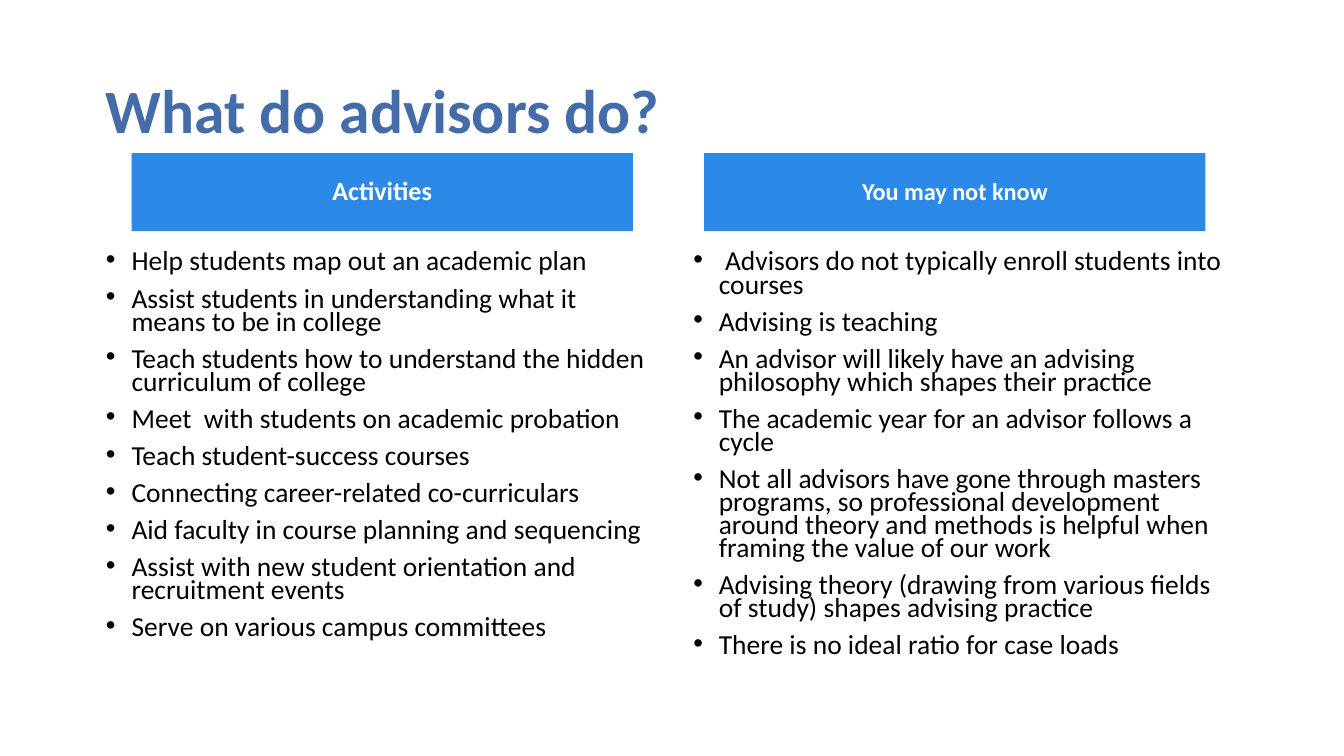
from dataclasses import dataclass

from lxml.etree import SubElement
from pptx import Presentation
from pptx.dml.color import RGBColor
from pptx.enum.shapes import MSO_SHAPE
from pptx.enum.text import MSO_ANCHOR, PP_ALIGN
from pptx.oxml.ns import qn
from pptx.util import Inches, Pt

FONT = "Calibri"
WIDTH = Inches(10)
HEIGHT = WIDTH * 9 // 16


@dataclass
class Column:
    """One headed list of the slide."""
    head: str
    size: float
    bar: float
    left: float
    items: list[str]


COLUMNS = [
    Column("Activities", 14, 0.98, 0.69, [
        "Help students map out an academic plan",
        "Assist students in understanding what it means to be in college",
        "Teach students how to understand the hidden curriculum of college",
        "Meet  with students on academic probation",
        "Teach student-success courses",
        "Connecting career-related co-curriculars",
        "Aid faculty in course planning and sequencing",
        "Assist with new student orientation and recruitment events",
        "Serve on various campus committees",
    ]),
    Column("You may not know", 13, 5.24, 5.06, [
        " Advisors do not typically enroll students into courses",
        "Advising is teaching",
        "An advisor will likely have an advising philosophy which shapes their practice",
        "The academic year for an advisor follows a cycle",
        "Not all advisors have gone through masters programs, so professional "
        "development around theory and methods is helpful when framing the value of our work",
        "Advising theory (drawing from various fields of study) shapes advising practice",
        "There is no ideal ratio for case loads",
    ]),
]


def paint(color: str) -> RGBColor:
    """Turn a hex string into a colour."""
    return RGBColor.from_string(color)


def write(shape, lines: list[str], *, size: float, color: str = "000000",
          bold: bool = False, align=PP_ALIGN.LEFT, anchor=MSO_ANCHOR.TOP,
          space: float = 0.9, before: float = 0, bullet: bool = False) -> None:
    """Fill a shape with one formatted paragraph per line."""
    frame = shape.text_frame
    frame.word_wrap = True
    frame.vertical_anchor = anchor
    for i, line in enumerate(lines):
        para = frame.paragraphs[0] if i == 0 else frame.add_paragraph()
        para.alignment = align
        para.line_spacing = space
        para.space_before = Pt(before)
        run = para.add_run()
        run.text = line
        font = run.font
        font.name, font.size, font.bold = FONT, Pt(size), bold
        font.color.rgb = paint(color)
        if bullet:
            props = para._p.get_or_add_pPr()
            props.set("marL", str(Inches(0.19)))
            props.set("indent", str(Inches(-0.19)))
            SubElement(props, qn("a:buFont"), typeface="Arial")
            SubElement(props, qn("a:buChar"), char="•")


def draw(slide, col: Column) -> None:
    """Draw the list and the header bar of a column."""
    body = slide.shapes.add_textbox(
        Inches(col.left), Inches(1.83), Inches(4.25), Inches(3.57))
    write(body, col.items, size=14.7, space=0.7, before=7.5, bullet=True)
    bar = slide.shapes.add_shape(
        MSO_SHAPE.RECTANGLE, Inches(col.bar), Inches(1.14), Inches(3.73), Inches(0.58))
    bar.shadow.inherit = False
    bar.fill.solid()
    bar.fill.fore_color.rgb = paint("2C89E8")
    bar.line.fill.background()
    write(bar, [col.head], size=col.size, color="FFFFFF", bold=True,
          align=PP_ALIGN.CENTER, anchor=MSO_ANCHOR.MIDDLE)


def main() -> None:
    """Build and save the slide."""
    deck = Presentation()
    deck.slide_width, deck.slide_height = WIDTH, HEIGHT
    slide = deck.slides.add_slide(deck.slide_layouts[6])
    title = slide.shapes.add_textbox(
        Inches(0.69), Inches(0.3), Inches(8.62), Inches(1.09))
    write(title, ["What do advisors do?"], size=33, color="446CA9", bold=True,
          anchor=MSO_ANCHOR.MIDDLE)
    for col in COLUMNS:
        draw(slide, col)
    deck.save("out.pptx")


if __name__ == "__main__":
    main()
